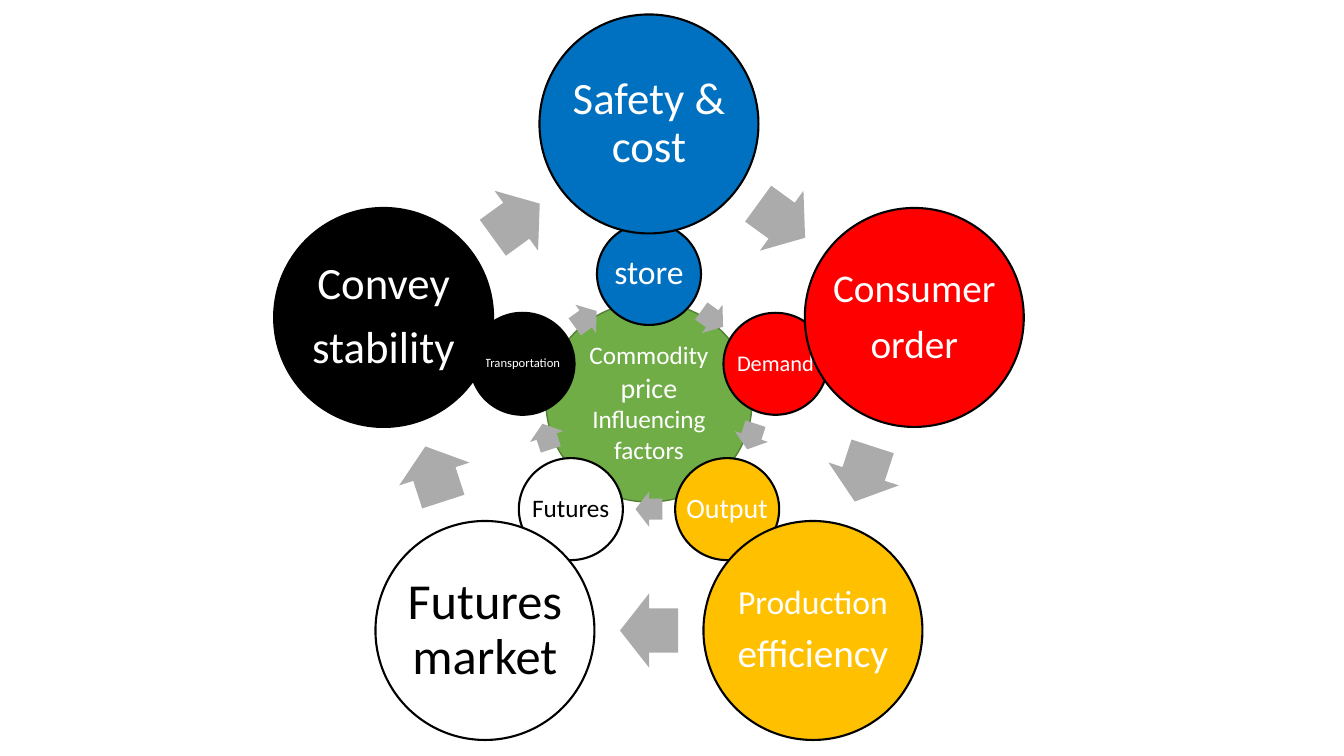
from dataclasses import dataclass
from math import cos, pi, radians, sin

from pptx import Presentation
from pptx.dml.color import RGBColor
from pptx.enum.shapes import MSO_SHAPE
from pptx.enum.text import MSO_ANCHOR, PP_ALIGN
from pptx.shapes.autoshape import Shape
from pptx.util import Emu, Pt

SCALE = 914400 / 100.8
FONT = "Calibri"
WHITE, BLACK, GREY, GREEN = "FFFFFF", "000000", "ABABAB", "70AD47"
BLUE, RED, GOLD = "0070C0", "FF0000", "FFC000"
MID_X, MID_Y = 649, 404
STEP = 72


@dataclass(frozen=True)
class Line:
    text: str
    size: int


@dataclass(frozen=True)
class Disc:
    fill: str
    ink: str
    lines: tuple[Line, ...]


@dataclass(frozen=True)
class Ring:
    rad_x: int
    rad_y: int
    wide: int
    high: int
    arrow_w: int
    arrow_h: int
    discs: tuple[Disc, ...]


INNER = Ring(133, 130, 104, 102, 27, 35, (
    Disc(BLUE, WHITE, (Line("store", 24),)),
    Disc(RED, WHITE, (Line("Demand", 16),)),
    Disc(GOLD, WHITE, (Line("Output", 20),)),
    Disc(WHITE, BLACK, (Line("Futures", 18),)),
    Disc(BLACK, WHITE, (Line("Transportation", 9),)),
))
OUTER = Ring(279, 280, 219, 219, 58, 74, (
    Disc(BLUE, WHITE, (Line("Safety & cost", 32),)),
    Disc(RED, WHITE, (Line("Consumer", 28), Line("order", 28))),
    Disc(GOLD, WHITE, (Line("Production", 24), Line("efficiency", 28))),
    Disc(WHITE, BLACK, (Line("Futures\vmarket", 36),)),
    Disc(BLACK, WHITE, (Line("Convey", 32), Line("stability", 32))),
))
CORE = Disc(GREEN, WHITE, (
    Line("Commodity", 18), Line("price", 20), Line("Influencing factors", 18),
))


def px(num: float) -> Emu:
    return Emu(round(num * SCALE))


def color(code: str) -> RGBColor:
    return RGBColor.from_string(code)


def place(kind: MSO_SHAPE, x: float, y: float, wide: int, high: int, fill: str) -> Shape:
    shape = slide.shapes.add_shape(
        kind, px(x - wide / 2), px(y - high / 2), px(wide), px(high))
    shape.shadow.inherit = False
    shape.fill.solid()
    shape.fill.fore_color.rgb = color(fill)
    return shape


def draw_disc(disc: Disc, x: float, y: float, wide: int, high: int,
              edge: str = BLACK, weight: float = 1.5,
              lead: float = 0.9, gap: float = 0.35) -> None:
    shape = place(MSO_SHAPE.OVAL, x, y, wide, high, disc.fill)
    shape.line.color.rgb = color(edge)
    shape.line.width = Pt(weight)
    frame = shape.text_frame
    frame.margin_left = frame.margin_right = 0
    frame.margin_top = frame.margin_bottom = 0
    frame.vertical_anchor = MSO_ANCHOR.MIDDLE
    frame.word_wrap = any(" " in line.text for line in disc.lines)
    for num, line in enumerate(disc.lines):
        para = frame.add_paragraph() if num else frame.paragraphs[0]
        para.text = line.text
        para.alignment = PP_ALIGN.CENTER
        para.line_spacing = lead
        para.space_after = Pt(line.size * gap)
        para.font.name = FONT
        para.font.size = Pt(line.size)
        para.font.color.rgb = color(disc.ink)


def draw_arrow(ring: Ring, angle: int) -> None:
    turn = radians(angle)
    near = cos(pi / 5)
    x = MID_X + ring.rad_x * near * sin(turn)
    y = MID_Y - ring.rad_y * near * cos(turn)
    arrow = place(MSO_SHAPE.RIGHT_ARROW, x, y, ring.arrow_w, ring.arrow_h, GREY)
    arrow.line.fill.background()
    arrow.adjustments[0] = 0.6
    arrow.adjustments[1] = 0.5
    arrow.rotation = angle


def draw_ring(ring: Ring) -> None:
    for num, disc in enumerate(ring.discs):
        angle = num * STEP
        turn = radians(angle)
        draw_disc(disc, MID_X + ring.rad_x * sin(turn),
                  MID_Y - ring.rad_y * cos(turn), ring.wide, ring.high)
        draw_arrow(ring, angle + STEP // 2)


deck = Presentation()
deck.slide_width, deck.slide_height = px(1344), px(756)
slide = deck.slides.add_slide(deck.slide_layouts[6])
draw_disc(CORE, MID_X, MID_Y - 2, 206, 200, "538035", 1, 1.0, 0)
draw_ring(INNER)
draw_ring(OUTER)
deck.save("out.pptx")
